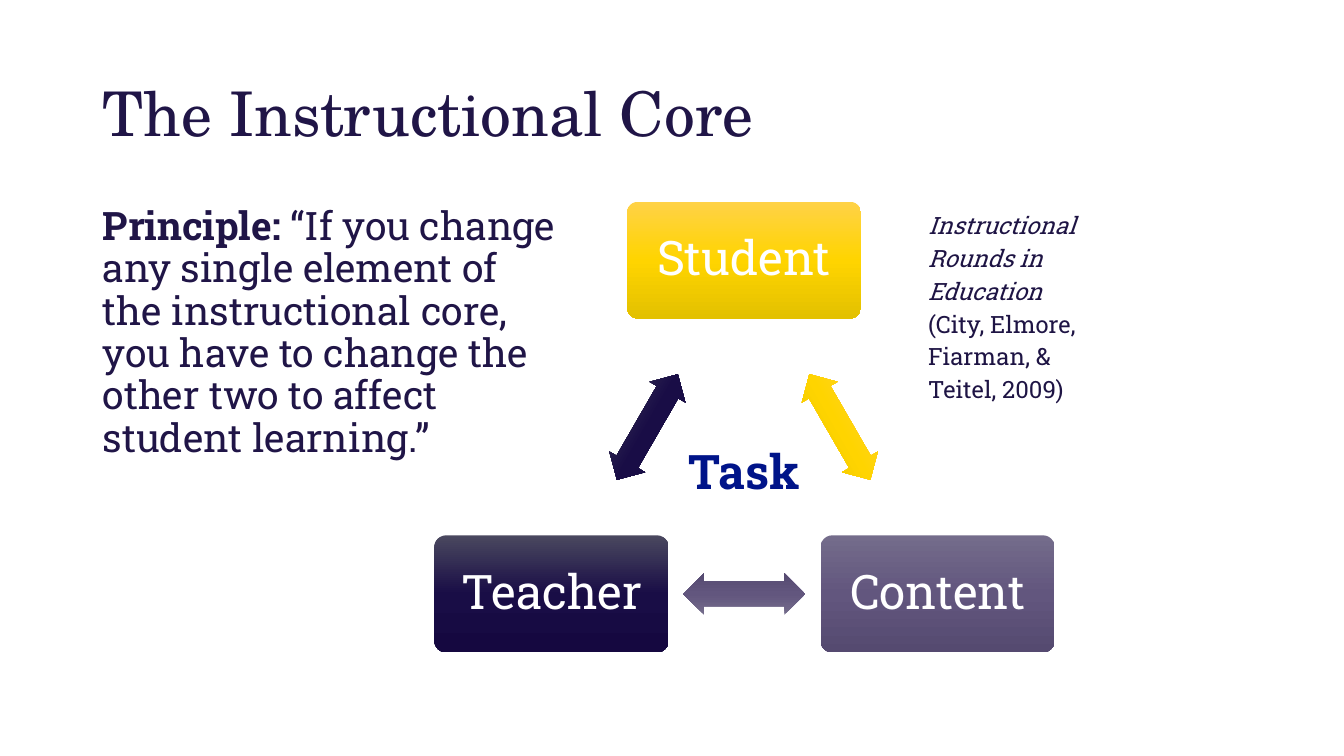
import copy

import pptx
import pptx.dml.color
import pptx.enum.shapes
import pptx.enum.text
import pptx.util

Cm = pptx.util.Cm
SHAPE = pptx.enum.shapes.MSO_SHAPE
ALIGN = pptx.enum.text.PP_ALIGN
ANCHOR = pptx.enum.text.MSO_ANCHOR


def rgb(value):
    return pptx.dml.color.RGBColor.from_string(value)


class Deck:
    """Holds the style and the current slide."""

    serif = "TeX Gyre Schola"
    slab = "Roboto Slab"
    navy = "201547"

    def __init__(self):
        self.prs = pptx.Presentation()
        self.prs.slide_width = Cm(33.87)
        self.prs.slide_height = Cm(19.05)
        self.s = self.prs.slides.add_slide(self.prs.slide_layouts[6])

    def style(self, r, size, color, font=None, bold=False, italic=False):
        r.font.name = font or self.slab
        r.font.size = pptx.util.Pt(size)
        r.font.bold = bold
        r.font.italic = italic
        r.font.color.rgb = rgb(color)

    def text(self, box, runs, size, color, spacing=1.0, font=None,
             align=ALIGN.LEFT, anchor=ANCHOR.TOP):
        tf = self.s.shapes.add_textbox(*map(Cm, box)).text_frame
        tf.word_wrap = True
        tf.vertical_anchor = anchor
        p = tf.paragraphs[0]
        p.alignment = align
        p.line_spacing = spacing
        for words, look in runs:
            r = p.add_run()
            r.text = words
            self.style(r, size, color, font, **look)

    def shape(self, kind, box, adjustments, colors, rotation=0):
        sp = self.s.shapes.add_shape(kind, *map(Cm, box))
        sp.shadow.inherit = False
        sp.rotation = rotation
        for i, value in enumerate(adjustments):
            sp.adjustments[i] = value
        sp.line.fill.background()
        sp.fill.gradient()
        sp.fill.gradient_angle = 270
        last = sp.fill.gradient_stops[1]._gs
        last.addprevious(copy.deepcopy(last))
        for stop, position, color in zip(sp.fill.gradient_stops, (0, 0.5, 1), colors):
            stop.position = position
            stop.color.rgb = rgb(color)
        return sp

    def node(self, left, top, label, colors):
        sp = self.shape(SHAPE.ROUNDED_RECTANGLE, (left, top, 5.9, 2.95), [0.1], colors)
        tf = sp.text_frame
        tf.text = label
        tf.word_wrap = True
        tf.vertical_anchor = ANCHOR.MIDDLE
        tf.margin_left = tf.margin_right = Cm(0.45)
        p = tf.paragraphs[0]
        p.alignment = ALIGN.CENTER
        p.line_spacing = 0.9
        self.style(p.runs[0], 34, "FFFFFF")

    def arrow(self, left, top, rotation, colors):
        self.shape(SHAPE.LEFT_RIGHT_ARROW, (left, top, 3.07, 1.04), [0.6, 0.5],
                   colors, rotation)


def main():
    deck = Deck()
    gold = ("FFD247", "FFD400", "E3C100")
    purple = ("746C8B", "62567E", "554A70")
    indigo = ("4A485F", "190D46", "150840")

    deck.text((2.34, 1.19, 26, 3.5), [("The Instructional Core", {})], 44, deck.navy,
              0.9, deck.serif, anchor=ANCHOR.MIDDLE)

    for label, colors, node_at, arrow_at, rotation in (
        ("Student", gold, (15.8, 5.08), (19.63, 10.24), 60),
        ("Content", purple, (20.68, 13.49), (17.22, 14.45), 180),
        ("Teacher", indigo, (10.95, 13.49), (14.78, 10.24), 300),
    ):
        deck.node(*node_at, label, colors)
        deck.arrow(*arrow_at, rotation, colors)

    deck.text((16.15, 11.02, 5.2, 1.7), [("Task", {"bold": True})], 34, "001489",
              align=ALIGN.CENTER)
    deck.text((2.34, 5.08, 12.1, 13.97), [
        ("Principle:", {"bold": True}),
        (" “If you change any single element of the instructional core, "
         "you have to change the other two to affect student learning.”", {}),
    ], 28, deck.navy, 0.9)
    deck.text((23.14, 5.08, 4.83, 5.16), [
        ("Instructional Rounds in Education", {"italic": True}),
        (" (City, Elmore, Fiarman, & Teitel, 2009)", {}),
    ], 17, "1E1444", 1.15)

    deck.prs.save("out.pptx")


if __name__ == "__main__":
    main()
